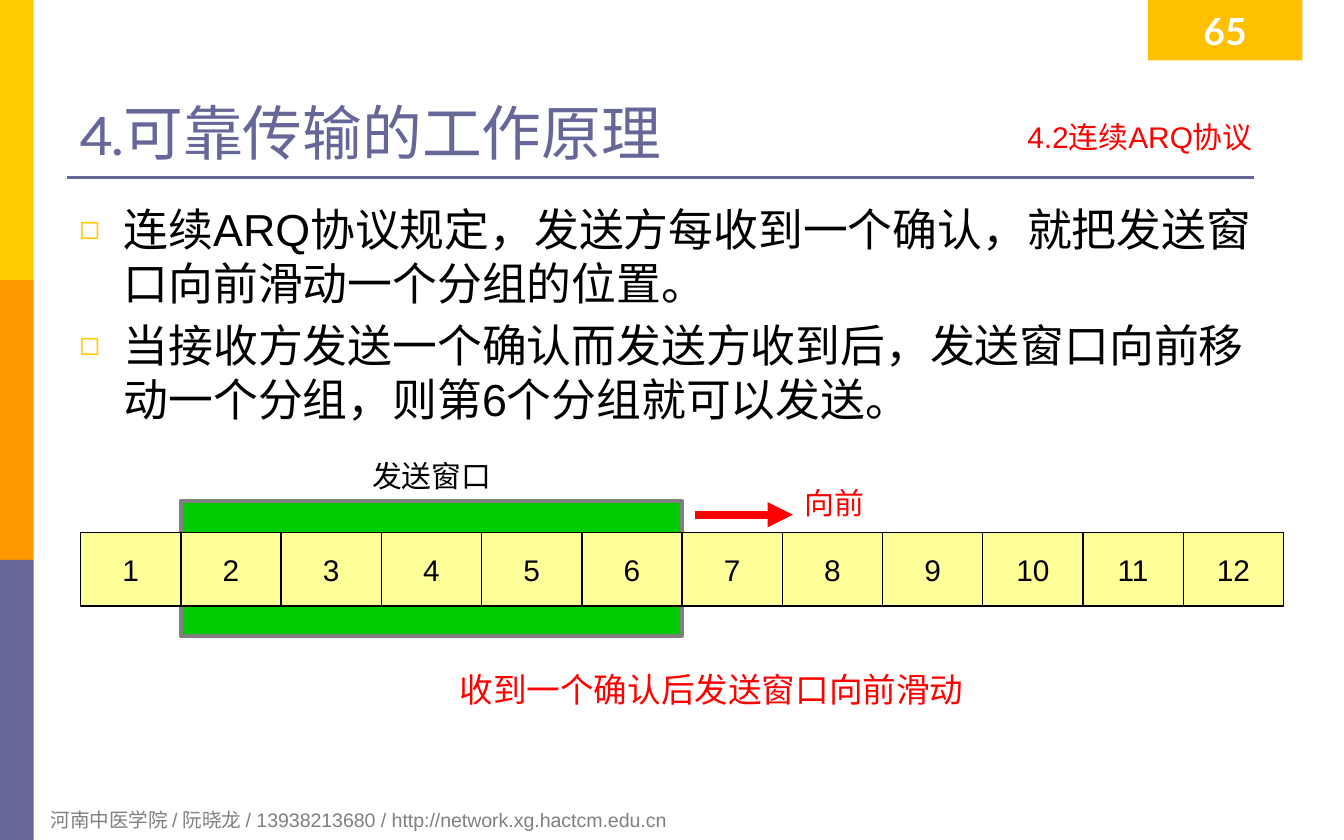
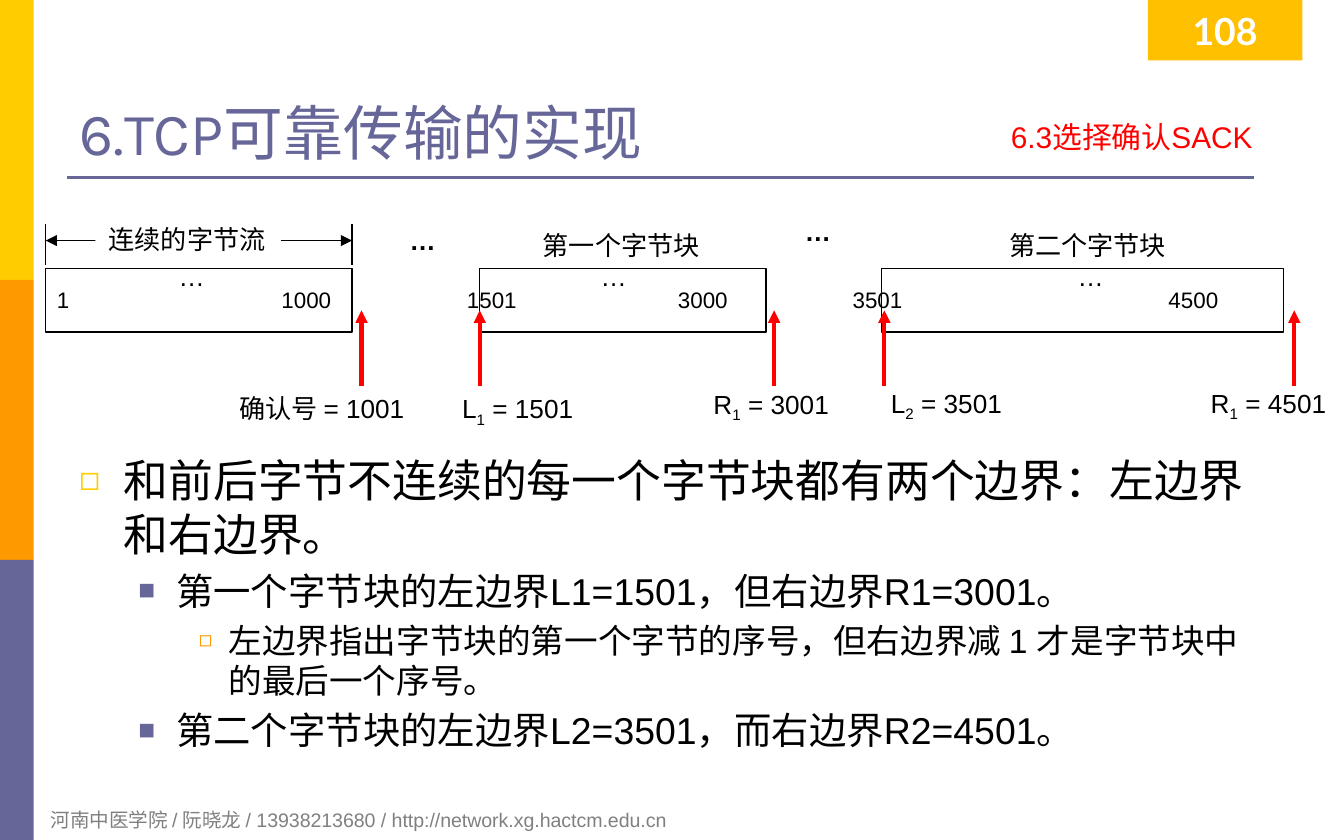
from dataclasses import dataclass

from pptx import Presentation
from pptx.dml.color import RGBColor
from pptx.enum.shapes import MSO_CONNECTOR as Link, MSO_SHAPE as Preset
from pptx.enum.text import MSO_ANCHOR as Anchor, MSO_AUTO_SIZE as Fit, PP_ALIGN as Align
from pptx.oxml.ns import qn
from pptx.util import Inches, Pt
from lxml.etree import SubElement

SLIDE_WIDTH, SLIDE_HEIGHT = Inches(10), Inches(6.25)
COLUMNS, ROWS = 100, 62.5

YELLOW = RGBColor(0xFF, 0xCC, 0x00)
ORANGE = RGBColor(0xFF, 0x99, 0x00)
VIOLET = RGBColor(0x66, 0x66, 0x99)
AMBER = RGBColor(0xFF, 0xC0, 0x00)
GRAY = RGBColor(0x80, 0x80, 0x80)
RED = RGBColor(0xFF, 0x00, 0x00)
GREEN = RGBColor(0x00, 0xCC, 0x00)
CREAM = RGBColor(0xFF, 0xFF, 0x99)
BLACK = RGBColor(0x00, 0x00, 0x00)
WHITE = RGBColor(0xFF, 0xFF, 0xFF)

TEXT_FONT, TITLE_FONT, NUMBER_FONT = "Arial", "Karla", "Lato"
FOOTER = "河南中医学院 / 阮晓龙 / 13938213680 / http://network.xg.hactcm.edu.cn"
BULLETS = [
    ("◻", YELLOW, 75, 0.33, 0.33, 24),
    ("■", VIOLET, 75, 0.72, 0.28, 20),
    ("◻", ORANGE, 65, 1.11, 0.22, 18),
]


def across(columns):
    return round(SLIDE_WIDTH * columns / COLUMNS)


def down(rows):
    return round(SLIDE_HEIGHT * rows / ROWS)


@dataclass
class Box:
    left: float
    top: float
    width: float
    height: float

    def area(self, left, top, width, height):
        return Box(self.left + left, self.top + top, width, height)

    def frame(self):
        return across(self.left), down(self.top), across(self.width), down(self.height)


PAGE = Box(0, 0, COLUMNS, ROWS)


def add_run(paragraph, words, size, color=BLACK, font=TEXT_FONT, bold=False, baseline=0):
    run = paragraph.add_run()
    run.text = words
    run.font.size, run.font.name, run.font.bold = Pt(size), font, bold
    run.font.color.rgb = color
    if baseline:
        run._r.get_or_add_rPr().set("baseline", str(baseline * 1000))


def add_label(slide, box, words, size, color=BLACK, align=Align.LEFT,
              anchor=Anchor.TOP, bold=False, wrap=False, subscript="", rest=""):
    frame = slide.shapes.add_textbox(*box.frame()).text_frame
    frame.word_wrap, frame.vertical_anchor = wrap, anchor
    paragraph = frame.paragraphs[0]
    paragraph.alignment = align
    add_run(paragraph, words, size, color, bold=bold)
    if subscript:
        add_run(paragraph, subscript, size, color, baseline=-25)
        add_run(paragraph, rest, size, color)


def add_block(slide, box, fill=None, outline=None, weight=0.75):
    block = slide.shapes.add_shape(Preset.RECTANGLE, *box.frame())
    block.shadow.inherit = False
    if fill is None:
        block.fill.background()
    else:
        block.fill.solid()
        block.fill.fore_color.rgb = fill
    if outline is None:
        block.line.fill.background()
    else:
        block.line.color.rgb = outline
        block.line.width = Pt(weight)
    return block


def add_line(slide, box, color=BLACK, weight=0.75, ends=()):
    line = slide.shapes.add_connector(
        Link.STRAIGHT, across(box.left), down(box.top),
        across(box.left + box.width), down(box.top + box.height))
    line.line.color.rgb = color
    line.line.width = Pt(weight)
    properties = line._element.spPr
    for end in ends:
        SubElement(properties.find(qn("a:ln")), qn(f"a:{end}")).set("type", "triangle")
    SubElement(properties, qn("a:effectLst"))


def place_text(holder, box, anchor=Anchor.TOP):
    holder.left, holder.top, holder.width, holder.height = box.frame()
    frame = holder.text_frame
    frame.auto_size, frame.word_wrap, frame.vertical_anchor = Fit.NONE, True, anchor
    frame.margin_left = frame.margin_right = Inches(0.09)
    frame.margin_top = frame.margin_bottom = Inches(0.04)
    return frame


def add_bands(slide, box):
    height = box.height / 3
    for row, color in enumerate((YELLOW, ORANGE, VIOLET)):
        add_block(slide, box.area(0, row * height, box.width, height), color)


def add_page_number(slide, box, number):
    badge = add_block(slide, box, AMBER)
    paragraph = place_text(badge, box, Anchor.MIDDLE).paragraphs[0]
    paragraph.alignment = Align.CENTER
    add_run(paragraph, number, 20, WHITE, NUMBER_FONT, bold=True)


def add_heading(slide, box, title, section):
    heading = place_text(slide.shapes.title, box, Anchor.BOTTOM).paragraphs[0]
    heading.alignment = Align.LEFT
    add_run(heading, title, 32, VIOLET, TITLE_FONT)

    topic = place_text(slide.placeholders[2], box.area(57.6, 5.9, 31.5, 3.9)).paragraphs[0]
    properties = topic._p.get_or_add_pPr()
    properties.set("marL", "0")
    properties.set("indent", "0")
    SubElement(properties, qn("a:buNone"))
    topic.alignment, topic.space_before = Align.RIGHT, Pt(0)
    add_run(topic, section, 16, RED)
    add_line(slide, box.area(0, 10.7, 88.3, 0), VIOLET, 1.5)


def add_points(slide, box, points):
    frame = place_text(slide.placeholders[1], box)
    for index, (level, words) in enumerate(points):
        paragraph = frame.paragraphs[0] if index == 0 else frame.add_paragraph()
        mark, color, percent, margin, hanging, size = BULLETS[level]
        paragraph.level = level
        properties = paragraph._p.get_or_add_pPr()
        properties.set("marL", str(Inches(margin)))
        properties.set("indent", str(-Inches(hanging)))
        tint = SubElement(properties, qn("a:buClr"))
        SubElement(tint, qn("a:srgbClr")).set("val", str(color))
        SubElement(properties, qn("a:buSzPct")).set("val", str(percent * 1000))
        SubElement(properties, qn("a:buChar")).set("char", mark)
        paragraph.space_before = Pt(0.2 * size if index else 0)
        add_run(paragraph, words, size)


def start_slide(deck, number, title, section):
    slide = deck.slides.add_slide(deck.slide_layouts[3])
    add_bands(slide, PAGE.area(0, 0, 2.5, ROWS))
    add_label(slide, PAGE.area(2.8, 59.6, 67.7, 2.8), FOOTER, 10.5, GRAY, wrap=True)
    add_heading(slide, PAGE.area(5, 2.5, 90, 10.4), title, section)
    add_page_number(slide, PAGE.area(85.4, 0, 11.5, 4.5), number)
    return slide


def add_sending_window(slide, box, packets=12, first=1, size=5):
    cell = box.width / packets
    add_block(slide, box.area(first * cell, -2.3, size * cell, 10), GREEN, GRAY, 2.25)
    add_block(slide, box, CREAM, BLACK)
    for index in range(packets):
        add_label(slide, box.area(index * cell, 0, cell, box.height), str(index + 1),
                  16, align=Align.CENTER, anchor=Anchor.MIDDLE)
        if index:
            add_line(slide, box.area(index * cell, 0, 0, box.height))
    add_label(slide, box.area(20.7, -6, 11, 3.7), "发送窗口", 16)
    add_line(slide, box.area(45.7, -1.3, 7.3, 0), RED, 4.5, ["tailEnd"])
    add_label(slide, box.area(52.9, -4, 6.5, 3.7), "向前", 16, RED)
    add_label(slide, box.area(27.2, 9.7, 39.9, 4), "收到一个确认后发送窗口向前滑动", 18, RED)


def add_byte_stream(slide, box):
    for left, width, fill in ((0, 22.8, WHITE), (32.3, 21.3, None), (62.2, 29.9, WHITE)):
        add_block(slide, box.area(left, 4, width, 4.7), fill, BLACK)

    add_line(slide, box.area(0, 1.9, 22.8, 0), ends=["headEnd", "tailEnd"])
    for left in (0, 22.8):
        add_line(slide, box.area(left, 0.7, 0, 3))
    add_block(slide, box.area(3.7, 0.1, 13.8, 3.4), WHITE)
    for left, top, name in ((3.7, 0.1, "连续的字节流"), (36, 0.6, "第一个字节块"),
                            (70.7, 0.6, "第二个字节块")):
        add_label(slide, box.area(left, top, 13.8, 3.4), name, 14)

    for left, top, bold in ((26.1, 0.2, True), (55.5, -0.5, True), (8.9, 2.9, False),
                            (40.3, 2.9, False), (75.8, 2.9, False)):
        add_label(slide, box.area(left, top, 3.8, 3.4), "…", 14, bold=bold)

    for center, byte in ((1.3, "1"), (19.4, "1000"), (33.2, "1501"),
                         (48.9, "3000"), (61.9, "3501"), (85.4, "4500")):
        add_label(slide, box.area(center - 3, 4.8, 6, 3), byte, 12, align=Align.CENTER)

    for left in (23.5, 32.3, 54.2, 62.4, 92.9):
        add_line(slide, box.area(left, 12.7, 0, -5.6), RED, 2.25, ["tailEnd"])

    add_label(slide, box.area(13.4, 12.7, 15.1, 3.4), "确认号 = 1001", 14)
    for left, top, side, block, byte in ((30, 12.7, "L", "1", 1501), (48.7, 12.4, "R", "1", 3001),
                                         (61.9, 12.3, "L", "2", 3501), (85.7, 12.3, "R", "1", 4501)):
        add_label(slide, box.area(left, top, 10.9, 3.4), side, 14,
                  subscript=block, rest=f" = {byte}")


def build_window_slide(deck):
    slide = start_slide(deck, "65", "4.可靠传输的工作原理", "4.2连续ARQ协议")
    add_points(slide, PAGE.area(5, 14.6, 90, 41.3), [
        (0, "连续ARQ协议规定，发送方每收到一个确认，就把发送窗口向前滑动一个分组的位置。"),
        (0, "当接收方发送一个确认而发送方收到后，发送窗口向前移动一个分组，则第6个分组就可以发送。"),
    ])
    add_sending_window(slide, PAGE.area(6, 39.6, 89.5, 5.5))


def build_sack_slide(deck):
    slide = start_slide(deck, "108", "6.TCP可靠传输的实现", "6.3选择确认SACK")
    add_points(slide, PAGE.area(5, 33.3, 90, 22.6), [
        (0, "和前后字节不连续的每一个字节块都有两个边界：左边界和右边界。"),
        (1, "第一个字节块的左边界L1=1501，但右边界R1=3001。"),
        (2, "左边界指出字节块的第一个字节的序号，但右边界减 1 才是字节块中的最后一个序号。"),
        (1, "第二个字节块的左边界L2=3501，而右边界R2=4501。"),
    ])
    add_byte_stream(slide, PAGE.area(3.4, 16, 92.1, 16.1))


def main():
    deck = Presentation()
    deck.slide_width, deck.slide_height = SLIDE_WIDTH, SLIDE_HEIGHT
    build_window_slide(deck)
    build_sack_slide(deck)
    deck.save("out.pptx")


if __name__ == "__main__":
    main()
